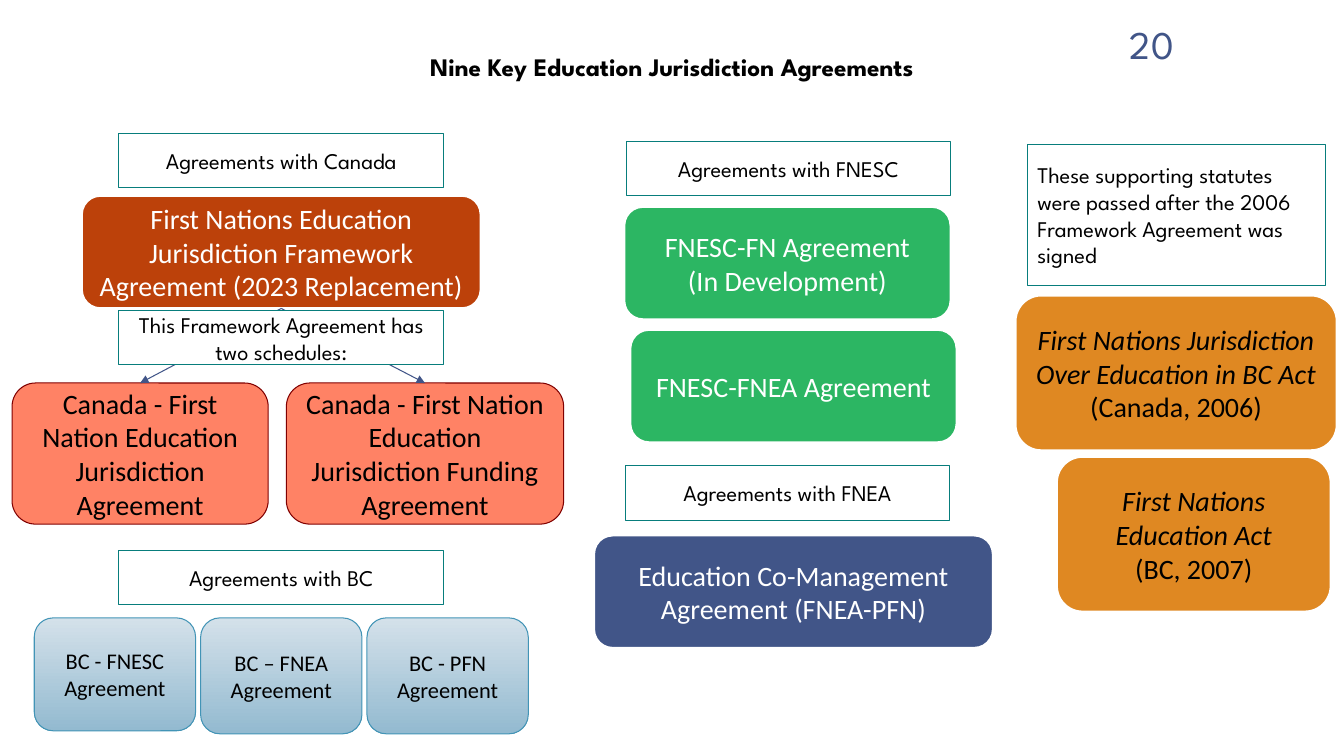
from lxml import etree
from pptx import Presentation
from pptx.dml.color import RGBColor
from pptx.enum.dml import MSO_LINE
from pptx.enum.shapes import MSO_CONNECTOR, MSO_SHAPE
from pptx.enum.text import MSO_ANCHOR, PP_ALIGN
from pptx.oxml.ns import qn
from pptx.util import Inches, Pt

ROUND = MSO_SHAPE.ROUNDED_RECTANGLE
RECT = MSO_SHAPE.RECTANGLE
LINE = MSO_CONNECTOR.STRAIGHT
SOLID = MSO_LINE.SOLID
LEFT, CENTER, RIGHT = PP_ALIGN.LEFT, PP_ALIGN.CENTER, PP_ALIGN.RIGHT
MIDDLE, TOP = MSO_ANCHOR.MIDDLE, MSO_ANCHOR.TOP
BODY, HEAD = "Calibri", "League Spartan"
BLACK, WHITE, NAVY = "000000", "FFFFFF", "415588"
RUST, CORAL, MAROON = "BC410A", "FF8265", "800000"
GREEN, AMBER, TEAL = "2CB663", "DF8822", "087D7C"
PALE, STEEL, BLUE = "D4E1EA", "93BAD0", "4294B6"


def color(code):
    return RGBColor.from_string(code)


def write(shape, text, font, size, tint, align=CENTER, anchor=MIDDLE, slant=""):
    frame = shape.text_frame
    frame.word_wrap = True
    frame.vertical_anchor = anchor
    for index, words in enumerate(text.split("\n")):
        para = frame.paragraphs[0] if index == 0 else frame.add_paragraph()
        para.alignment = align
        para.font.name = font
        para.font.size = Pt(size)
        para.font.color.rgb = color(tint)
        if slant and words.startswith(slant):
            para.add_run().text = slant
            para.runs[0].font.italic = True
            words = words[len(slant):]
        if words:
            para.add_run().text = words
    return frame


def block(slide, kind, box, edge, width):
    shape = slide.shapes.add_shape(kind, *map(Inches, box))
    shape.shadow.inherit = False
    shape.line.color.rgb = color(edge)
    shape.line.width = Pt(width)
    return shape


def card(slide, box, text, fill, tint=WHITE, edge=WHITE, width=1.75, slant=""):
    shape = block(slide, ROUND, box, edge, width)
    shape.fill.solid()
    shape.fill.fore_color.rgb = color(fill)
    write(shape, text, BODY, 20, tint, slant=slant)
    return shape


def pact(slide, box, text):
    shape = block(slide, ROUND, box, BLUE, 0.75)
    shape.fill.gradient()
    shape.fill.gradient_angle = 270
    for stop, code in zip(shape.fill.gradient_stops, (PALE, STEEL)):
        stop.color.rgb = color(code)
    write(shape, text, BODY, 16, BLACK)


def label(slide, left, top, text, width=3.22, height=0.54, align=CENTER):
    shape = block(slide, RECT, (left, top, width, height), TEAL, 0.75)
    shape.fill.solid()
    shape.fill.fore_color.rgb = color(WHITE)
    write(shape, text, HEAD, 16, BLACK, align)


def note(slide, box, text, size, tint, align, anchor):
    shape = slide.shapes.add_textbox(*map(Inches, box))
    return write(shape, text, HEAD, size, tint, align, anchor)


def arrow(slide, start, end):
    line = slide.shapes.add_connector(LINE, 0, 0, 0, 0)
    line.begin_connect(start, 2)
    line.end_connect(end, 0)
    line.line.color.rgb = color(NAVY)
    line.line.width = Pt(0.75)
    line.line.dash_style = SOLID
    stroke = line.line._get_or_add_ln()
    etree.SubElement(stroke, qn("a:tailEnd"), type="triangle")
    etree.SubElement(line._element.spPr, qn("a:effectLst"))


def main():
    deck = Presentation()
    deck.slide_width, deck.slide_height = Inches(13.33), Inches(7.5)
    slide = deck.slides.add_slide(deck.slide_layouts[6])

    title = note(slide, (1.58, 0.46, 10.17, 0.4),
                 "Nine Key Education Jurisdiction Agreements",
                 18, BLACK, CENTER, MIDDLE)
    title.paragraphs[0].font.bold = True
    note(slide, (10.85, 0.15, 0.89, 0.55), "20", 28, NAVY, RIGHT, TOP)

    frame = card(slide, (0.81, 1.94, 3.96, 1.12),
                 "First Nations Education Jurisdiction Framework "
                 "Agreement (2023 Replacement)", RUST)
    for left, width, text in (
        (0.12, 2.54, "Canada - First Nation Education Jurisdiction Agreement"),
        (2.84, 2.75,
         "Canada - First Nation Education Jurisdiction Funding Agreement"),
    ):
        part = card(slide, (left, 3.8, width, 1.4), text,
                    CORAL, BLACK, MAROON, 0.75)
        arrow(slide, frame, part)

    for index, (name, height) in enumerate(
            (("BC - FNESC", 1.12), ("BC – FNEA", 1.15), ("BC - PFN", 1.15))):
        pact(slide, (0.34 + 1.65 * index, 6.13, 1.6, height),
             name + " Agreement")

    card(slide, (6.19, 2.05, 3.24, 1.12),
         "FNESC-FN Agreement\n(In Development)", GREEN)
    card(slide, (6.25, 3.27, 3.24, 1.12), "FNESC-FNEA Agreement", GREEN)
    card(slide, (5.89, 5.31, 3.96, 1.12),
         "Education Co-Management Agreement (FNEA-PFN)", NAVY)
    card(slide, (10.07, 2.93, 3.19, 1.54),
         "First Nations Jurisdiction Over Education in BC Act (Canada, 2006)",
         AMBER, BLACK,
         slant="First Nations Jurisdiction Over Education in BC Act ")
    card(slide, (10.48, 4.53, 2.72, 1.54),
         "First Nations Education Act\n(BC, 2007)", AMBER, BLACK,
         slant="First Nations Education Act")

    for left, top, text in (
        (1.18, 1.32, "Agreements with Canada"),
        (1.18, 3.08, "This Framework Agreement has two schedules:"),
        (1.18, 5.46, "Agreements with BC"),
        (6.21, 1.4, "Agreements with FNESC"),
        (6.2, 4.62, "Agreements with FNEA"),
    ):
        label(slide, left, top, text)
    label(slide, 10.19, 1.43,
          "These supporting statutes were passed after the 2006 "
          "Framework Agreement was signed", 2.96, 1.4, LEFT)

    deck.save("out.pptx")


if __name__ == "__main__":
    main()
